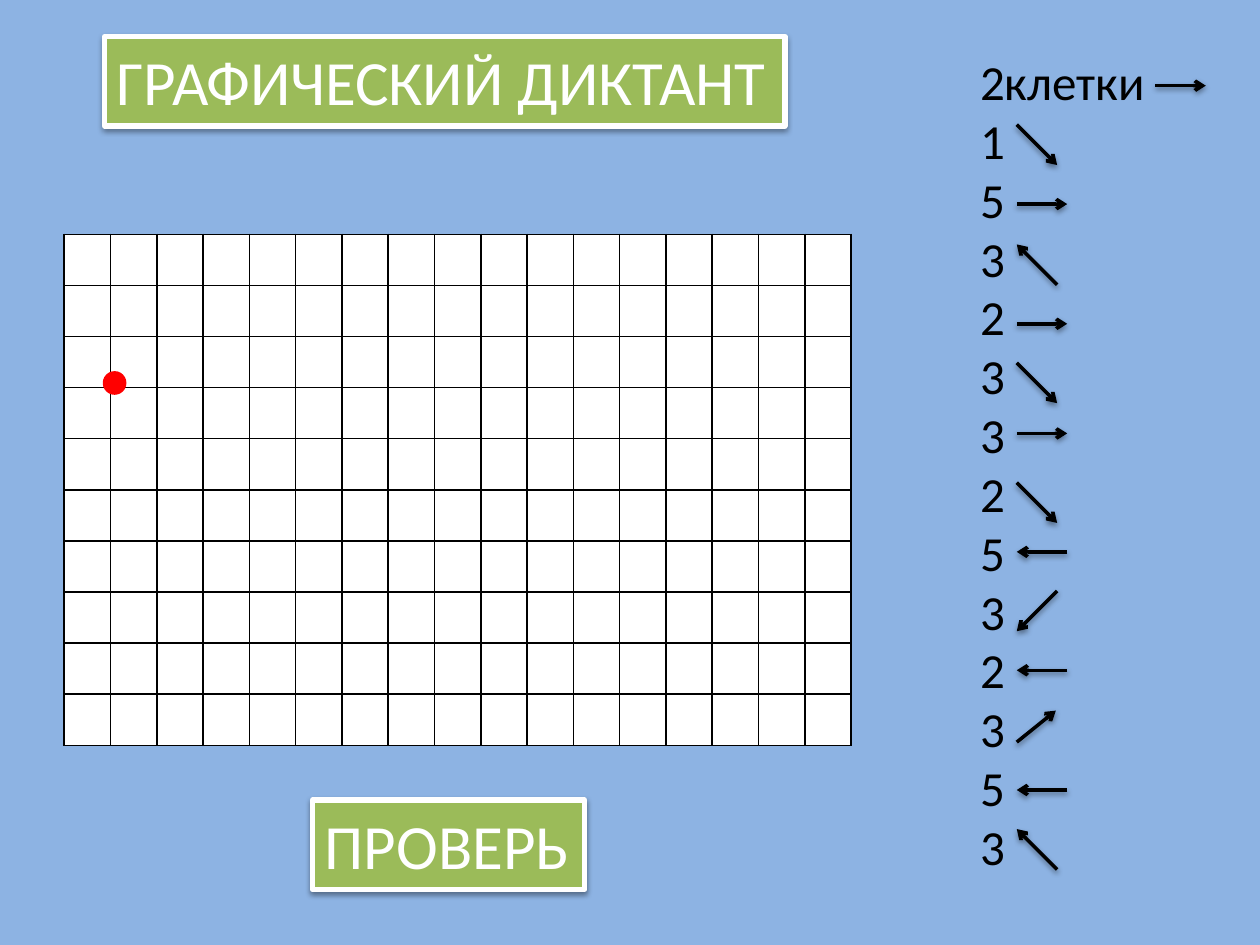
from lxml import etree
from pptx import Presentation
from pptx.dml.color import RGBColor
from pptx.enum.shapes import MSO_CONNECTOR, MSO_SHAPE
from pptx.enum.text import MSO_ANCHOR, MSO_AUTO_SIZE, PP_ALIGN
from pptx.oxml.ns import qn
from pptx.util import Inches, Pt

STRAIGHT = MSO_CONNECTOR.STRAIGHT
RECTANGLE, OVAL = MSO_SHAPE.RECTANGLE, MSO_SHAPE.OVAL
TOP, LEFT = MSO_ANCHOR.TOP, PP_ALIGN.LEFT
FIT_SHAPE = MSO_AUTO_SIZE.SHAPE_TO_FIT_TEXT

FONT = "Calibri"
COLORS = {"sky": "8DB3E3", "green": "9BBB59", "white": "FFFFFF", "black": "000000", "red": "FF0000"}

ARROW_LEFT = 8.07
ARROWS = {
    "right": (0, 0, 0.4, 0),
    "left": (0.4, 0, 0, 0),
    "down right": (0, 0, 0.32, 0.32),
    "down left": (0.32, 0, 0, 0.32),
    "up right": (0, 0.25, 0.31, 0),
    "up left": (0.32, 0.32, 0, 0),
}
STEPS = [
    ("2клетки", "right", 9.17, 0.68),
    ("1", "down right", ARROW_LEFT, 0.99),
    ("5", "right", ARROW_LEFT, 1.62),
    ("3", "up left", ARROW_LEFT, 1.94),
    ("2", "right", ARROW_LEFT, 2.57),
    ("3", "down right", ARROW_LEFT, 2.88),
    ("3", "right", ARROW_LEFT, 3.44),
    ("2", "down right", ARROW_LEFT, 3.83),
    ("5", "left", ARROW_LEFT, 4.38),
    ("3", "down left", ARROW_LEFT, 4.69),
    ("2", "left", ARROW_LEFT, 5.32),
    ("3", "up right", ARROW_LEFT, 5.64),
    ("5", "left", ARROW_LEFT, 6.27),
    ("3", "up left", ARROW_LEFT, 6.58),
]


class DictationSlide:
    """Holds the style and the slide, and draws each kind of element."""

    def __init__(self, slide):
        self.slide = slide
        self.shapes = slide.shapes

    def color(self, name):
        return RGBColor.from_string(COLORS[name])

    def background(self, name):
        fill = self.slide.background.fill
        fill.solid()
        fill.fore_color.rgb = self.color(name)

    def shadow(self, properties):
        effects = properties.find(qn("a:effectLst"))
        if effects is None:
            effects = etree.SubElement(properties, qn("a:effectLst"))
        outer = etree.SubElement(effects, qn("a:outerShdw"), blurRad=str(Pt(3.1)),
                                 dist=str(Pt(1.6)), dir="5400000", rotWithShape="0")
        tint = etree.SubElement(outer, qn("a:srgbClr"), val=COLORS["black"])
        etree.SubElement(tint, qn("a:alpha"), val="38000")

    def format_text(self, frame, size, color):
        frame.vertical_anchor = TOP
        frame.auto_size = FIT_SHAPE
        for paragraph in frame.paragraphs:
            paragraph.alignment = LEFT
            for run in paragraph.runs:
                run.font.name = FONT
                run.font.size = Pt(size)
                run.font.color.rgb = self.color(color)

    def shape(self, kind, left, top, width, height, fill, line, weight):
        shape = self.shapes.add_shape(kind, Inches(left), Inches(top), Inches(width), Inches(height))
        shape.shadow.inherit = False
        shape.fill.solid()
        shape.fill.fore_color.rgb = self.color(fill)
        shape.line.color.rgb = self.color(line)
        shape.line.width = Pt(weight)
        return shape

    def plate(self, text, left, top, width, height):
        plate = self.shape(RECTANGLE, left, top, width, height, "green", "white", 3)
        self.shadow(plate._element.spPr)
        plate.text_frame.text = text
        plate.text_frame.word_wrap = False
        self.format_text(plate.text_frame, 36, "white")

    def dot(self, left, top, size):
        self.shape(OVAL, left, top, size, size, "red", "red", 2)

    def grid(self, left, top, width, height, rows, columns):
        table = self.shapes.add_table(rows, columns, Inches(left), Inches(top),
                                      Inches(width), Inches(height)).table
        table.first_row = False
        table.horz_banding = False
        for cell in table.iter_cells():
            properties = cell._tc.get_or_add_tcPr()
            for side in ("a:lnL", "a:lnR", "a:lnT", "a:lnB"):
                border = etree.SubElement(properties, qn(side), w=str(Pt(1)))
                fill = etree.SubElement(border, qn("a:solidFill"))
                etree.SubElement(fill, qn("a:srgbClr"), val=COLORS["black"])
            cell.fill.solid()
            cell.fill.fore_color.rgb = self.color("white")

    def steps_text(self, lines, left, top, width, height):
        box = self.shapes.add_textbox(Inches(left), Inches(top), Inches(width), Inches(height))
        frame = box.text_frame
        frame.text = "\n".join(lines)
        frame.word_wrap = True
        self.format_text(frame, 28, "black")

    def arrow(self, direction, left, top):
        x1, y1, x2, y2 = ARROWS[direction]
        arrow = self.shapes.add_connector(STRAIGHT, Inches(left + x1), Inches(top + y1),
                                          Inches(left + x2), Inches(top + y2))
        arrow.line.color.rgb = self.color("black")
        arrow.line.width = Pt(2)
        etree.SubElement(arrow.line._get_or_add_ln(), qn("a:tailEnd"), type="arrow")
        self.shadow(arrow._element.spPr)


def main():
    presentation = Presentation()
    presentation.slide_width = Inches(10)
    presentation.slide_height = Inches(7.5)
    page = DictationSlide(presentation.slides.add_slide(presentation.slide_layouts[6]))

    page.background("sky")
    page.grid(0.51, 1.86, 6.25, 4, rows=10, columns=17)
    page.plate("ГРАФИЧЕСКИЙ ДИКТАНТ", 0.83, 0.29, 5.4, 0.71)
    page.dot(0.83, 2.96, 0.16)
    page.plate("ПРОВЕРЬ", 2.48, 6.35, 2.16, 0.71)
    page.steps_text([step[0] for step in STEPS], 7.68, 0.36, 1.52, 7.91)
    for _, direction, left, top in STEPS:
        page.arrow(direction, left, top)

    presentation.save("out.pptx")


if __name__ == "__main__":
    main()
